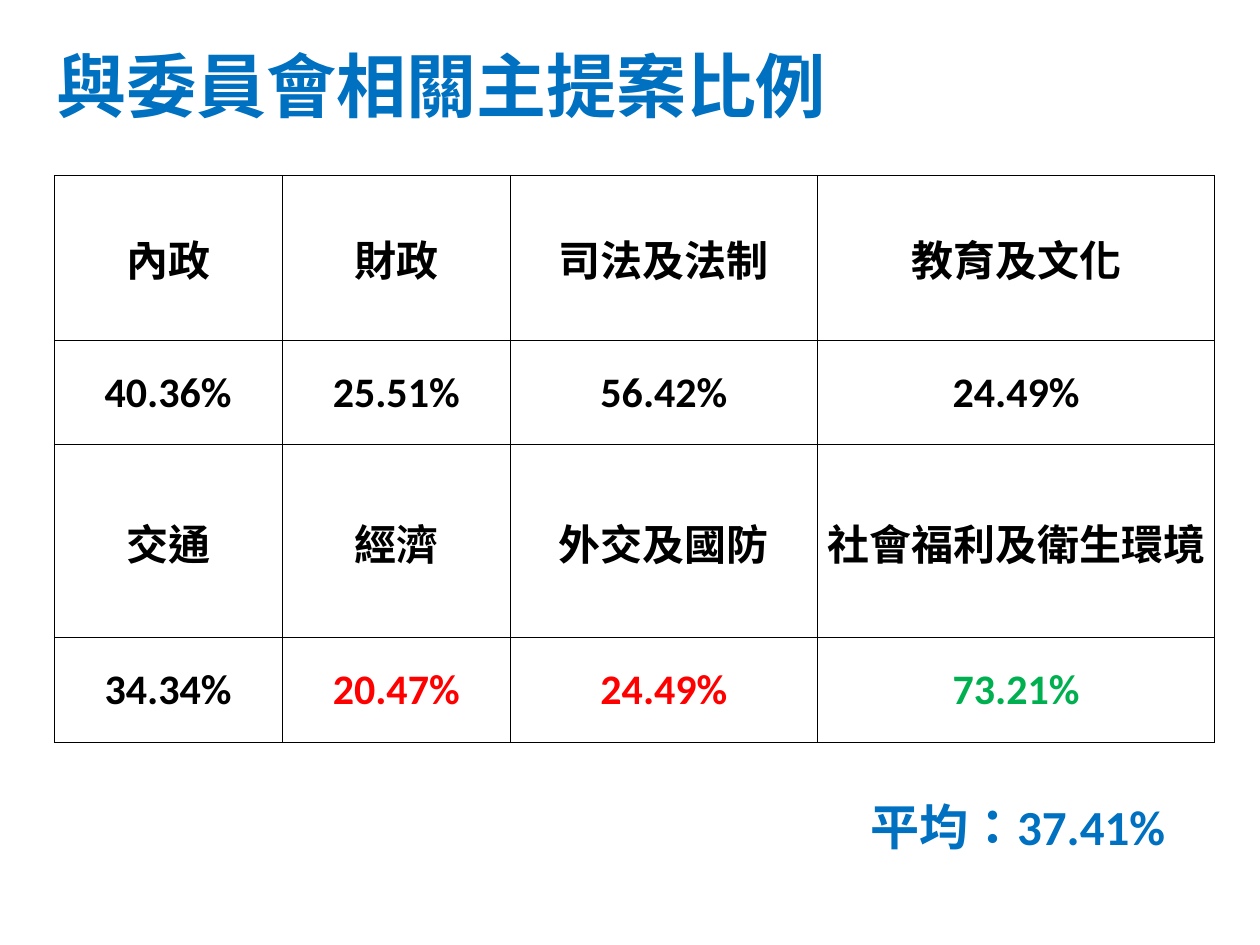
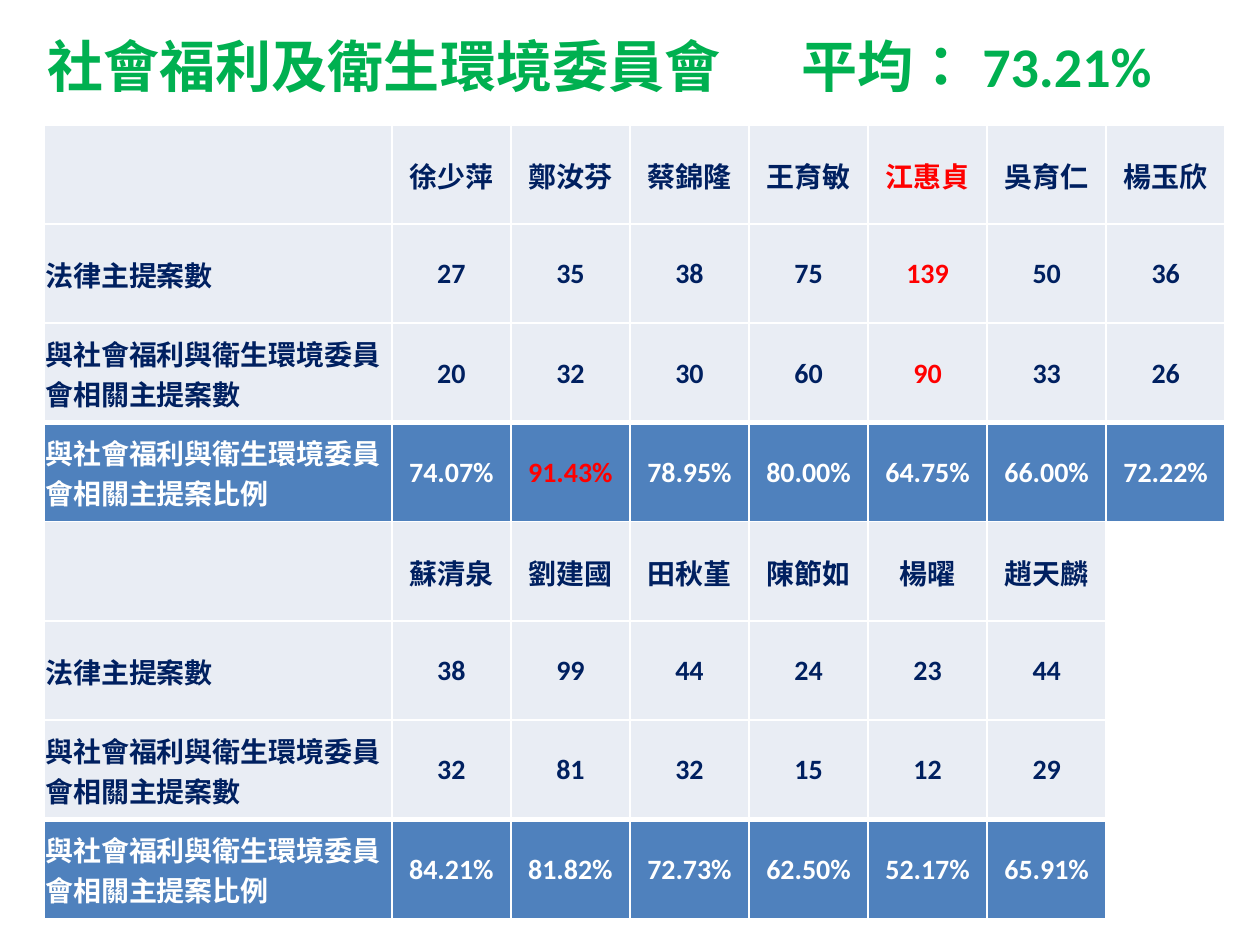
from lxml.etree import SubElement
from pptx import Presentation
from pptx.dml.color import RGBColor
from pptx.enum.text import MSO_ANCHOR as Anchor, MSO_AUTO_SIZE as Fit, PP_ALIGN as Align
from pptx.oxml.ns import qn
from pptx.util import Inches, Pt

BLUE = RGBColor(0x00, 0x70, 0xC0)
GREEN = RGBColor(0x00, 0xB0, 0x50)
RED = RGBColor(0xFF, 0x00, 0x00)
NAVY = RGBColor(0x00, 0x20, 0x60)
BLACK = RGBColor(0x00, 0x00, 0x00)
WHITE = RGBColor(0xFF, 0xFF, 0xFF)
PALE = RGBColor(0xE9, 0xED, 0xF4)
STEEL = RGBColor(0x4F, 0x81, 0xBD)
LATIN = "Calibri"
HAN = "Noto Sans CJK SC"

SHARES = [
    ["內政", "財政", "司法及法制", "教育及文化"],
    ["40.36%", "25.51%", "56.42%", "24.49%"],
    ["交通", "經濟", "外交及國防", "社會福利及衛生環境"],
    ["34.34%", "20.47%", "24.49%", "73.21%"],
]
LABELS = ["", "法律主提案數", "與社會福利與衛生環境委員會相關主提案數",
          "與社會福利與衛生環境委員會相關主提案比例"]
FIRST = [
    ["徐少萍", "鄭汝芬", "蔡錦隆", "王育敏", "江惠貞", "吳育仁", "楊玉欣"],
    ["27", "35", "38", "75", "139", "50", "36"],
    ["20", "32", "30", "60", "90", "33", "26"],
    ["74.07%", "91.43%", "78.95%", "80.00%", "64.75%", "66.00%", "72.22%"],
]
SECOND = [
    ["蘇清泉", "劉建國", "田秋堇", "陳節如", "楊曜", "趙天麟"],
    ["38", "99", "44", "24", "23", "44"],
    ["32", "81", "32", "15", "12", "29"],
    ["84.21%", "81.82%", "72.73%", "62.50%", "52.17%", "65.91%"],
]


def style_text(frame, size, color, font=LATIN, align=Align.LEFT):
    for para in frame.paragraphs:
        para.alignment = align
        for run in para.runs:
            run.font.size = Pt(size)
            run.font.bold = True
            run.font.name = font
            run.font.color.rgb = color
            props = run._r.get_or_add_rPr()
            props.set("lang", "zh-TW")
            SubElement(props, qn("a:ea")).set("typeface", HAN)


def fill_box(shape, text, box, size, color, font=LATIN, align=Align.LEFT):
    shape.left, shape.top, shape.width, shape.height = map(Inches, box)
    frame = shape.text_frame
    frame.text = text
    frame.word_wrap = True
    frame.auto_size = Fit.NONE
    frame.vertical_anchor = Anchor.TOP
    style_text(frame, size, color, font, align)


def add_page(deck, title, box, size, color):
    slide = deck.slides.add_slide(deck.slide_layouts[5])
    fill_box(slide.shapes.title, title, box, size, color, HAN)
    return slide


def add_note(slide, text, box, size, color, align=Align.LEFT):
    shape = slide.shapes.add_textbox(*map(Inches, box))
    fill_box(shape, text, box, size, color, align=align)


def set_edges(cell, color, widths):
    props = cell._tc.get_or_add_tcPr()
    for side, width in zip("LRTB", widths):
        line = SubElement(props, qn(f"a:ln{side}"), w=str(Pt(width)))
        fill = SubElement(line, qn("a:solidFill"))
        SubElement(fill, qn("a:srgbClr"), val=str(color))


def set_cell(cell, text, size, color, align, edge, widths, fill=None):
    cell.text = text
    cell.vertical_anchor = Anchor.MIDDLE
    cell.margin_left = cell.margin_right = cell.margin_top = Inches(0.01)
    cell.margin_bottom = 0
    style_text(cell.text_frame, size, color, align=align)
    set_edges(cell, edge, widths)
    if fill is None:
        cell.fill.background()
    else:
        cell.fill.solid()
        cell.fill.fore_color.rgb = fill


def add_grid(slide, left, top, cols, rows):
    table = slide.shapes.add_table(
        len(rows), len(cols), Inches(left), Inches(top),
        Inches(sum(cols)), Inches(sum(rows))).table
    table.first_row = table.horz_banding = False
    for col, width in zip(table.columns, cols):
        col.width = Inches(width)
    for row, height in zip(table.rows, rows):
        row.height = Inches(height)
    return table


def add_shares(slide):
    table = add_grid(slide, 0.43, 1.39, [1.81, 1.81, 2.44, 3.15], [1.31, 0.83, 1.53, 0.83])
    marks = {(3, 1): RED, (3, 2): RED, (3, 3): GREEN}
    for r, row in enumerate(SHARES):
        for c, text in enumerate(row):
            set_cell(table.cell(r, c), text, 24, marks.get((r, c), BLACK),
                     Align.CENTER, BLACK, [0.5] * 4)


def add_members(slide, top, data, marks=()):
    count = len(data[0])
    table = add_grid(slide, 0.35, top, [2.76] + [0.945] * count, [0.7875] * 4)
    last = len(data) - 1
    for r, row in enumerate(data):
        ratio = r == last
        widths = [1, 1, 3 if ratio else 1, 3 if r == last - 1 else 1]
        for c, text in enumerate([LABELS[r]] + row):
            color = RED if (r, c) in marks else WHITE if ratio else NAVY
            set_cell(table.cell(r, c), text, 16, color,
                     Align.CENTER if c else Align.LEFT,
                     WHITE, widths, STEEL if ratio else PALE)


def main():
    deck = Presentation()
    deck.slide_width, deck.slide_height = Inches(10), Inches(7.5)

    page = add_page(deck, "與委員會相關主提案比例", (0.35, 0.29, 8.03, 1.08), 40, BLUE)
    add_shares(page)
    add_note(page, "平均：37.41%", (6.81, 6.27, 2.76, 0.57), 28, BLUE)

    page = add_page(deck, "社會福利及衛生環境委員會", (0.28, 0.2, 5.83, 0.64), 32, GREEN)
    add_note(page, "平均： 73.21%", (5.94, 0.2, 3.62, 0.64), 32, GREEN, Align.CENTER)
    add_members(page, 0.99, FIRST, {(0, 5), (1, 5), (2, 5), (3, 2)})
    add_members(page, 4.14, SECOND)

    deck.save("out.pptx")


if __name__ == "__main__":
    main()
